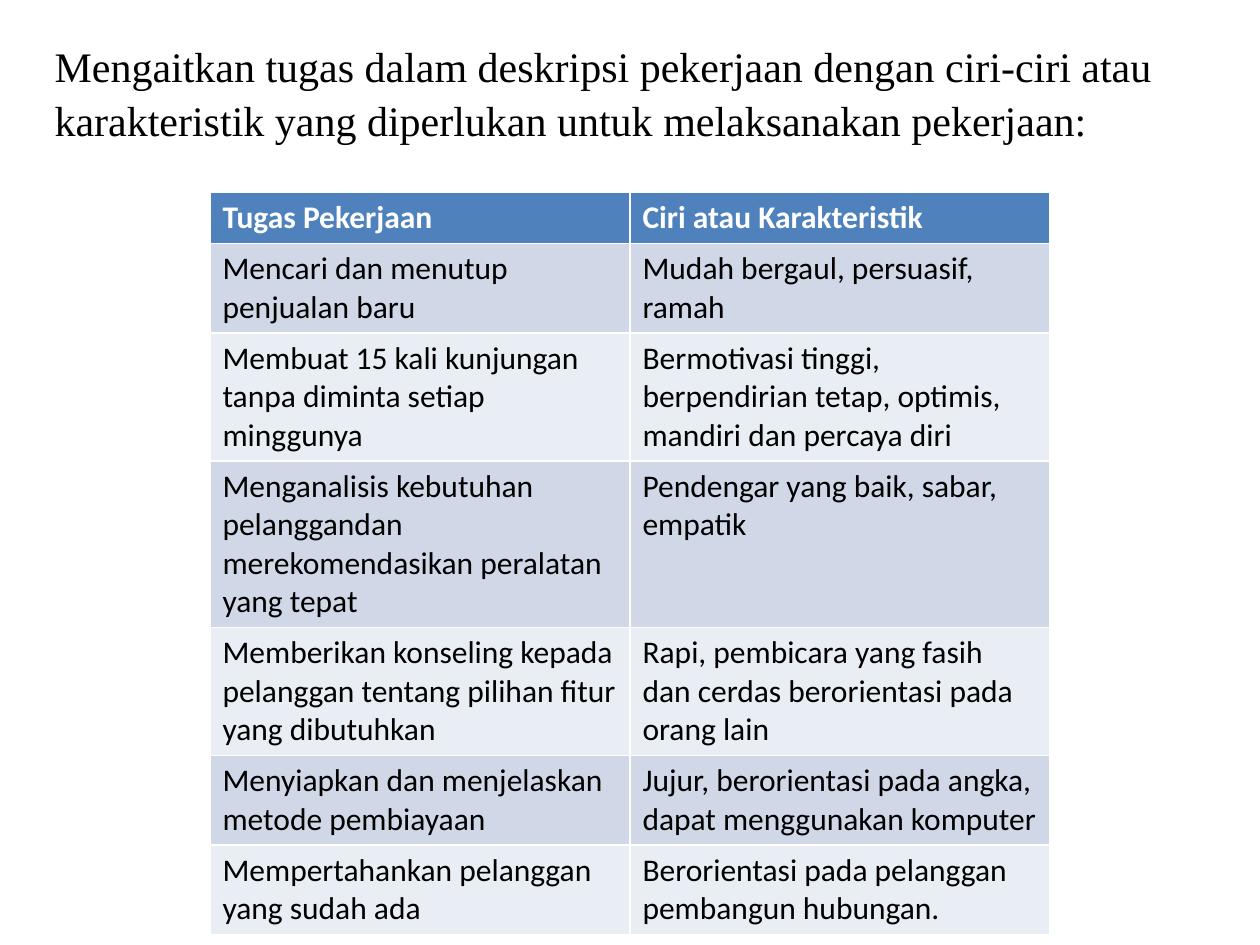
import pptx
import pptx.util
import pptx.dml.color
import pptx.enum.text

Pt = pptx.util.Pt
COLORS = {"head": "4F81BD", "odd": "D0D8E8", "even": "E9EDF4",
          "white": "FFFFFF", "black": "000000"}


def color(name):
    return pptx.dml.color.RGBColor.from_string(COLORS[name])


deck = pptx.Presentation()
deck.slide_width, deck.slide_height = Pt(720), Pt(540)
slide = deck.slides.add_slide(deck.slide_layouts[5])

title = slide.shapes.title
title.left, title.top, title.width, title.height = Pt(24), Pt(18), Pt(672), Pt(72)
frame = title.text_frame
frame.text = ("Mengaitkan tugas dalam deskripsi pekerjaan dengan ciri-ciri atau "
              "karakteristik yang diperlukan untuk melaksanakan pekerjaan:")
frame.word_wrap = True
frame.auto_size = pptx.enum.text.MSO_AUTO_SIZE.NONE
frame.vertical_anchor = pptx.enum.text.MSO_ANCHOR.TOP
para = frame.paragraphs[0]
para.alignment = pptx.enum.text.PP_ALIGN.LEFT
para.line_spacing = 1.06
para.font.name = "Times New Roman"
para.font.size = Pt(24)
para.font.color.rgb = color("black")

rows = [
    ("Tugas Pekerjaan", "Ciri atau Karakteristik"),
    ("Mencari dan menutup penjualan baru", "Mudah bergaul, persuasif, ramah"),
    ("Membuat 15 kali kunjungan tanpa diminta setiap minggunya",
     "Bermotivasi tinggi, berpendirian tetap, optimis, mandiri dan percaya diri"),
    ("Menganalisis kebutuhan pelanggandan merekomendasikan peralatan yang tepat",
     "Pendengar yang baik, sabar, empatik"),
    ("Memberikan konseling kepada pelanggan tentang pilihan fitur yang dibutuhkan",
     "Rapi, pembicara yang fasih dan cerdas berorientasi pada orang lain"),
    ("Menyiapkan dan menjelaskan metode pembiayaan",
     "Jujur, berorientasi pada angka, dapat menggunakan komputer"),
    ("Mempertahankan pelanggan yang sudah ada",
     "Berorientasi pada pelanggan pembangun hubungan."),
]
# Rows start at one line high and grow with their text.
high = 29.2
table = slide.shapes.add_table(len(rows), 2, Pt(120), Pt(110), Pt(480),
                               Pt(high * len(rows))).table
for r, row in enumerate(rows):
    fill = "head" if r == 0 else "odd" if r % 2 else "even"
    for c, text in enumerate(row):
        cell = table.cell(r, c)
        cell.text = text
        cell.fill.solid()
        cell.fill.fore_color.rgb = color(fill)
        font = cell.text_frame.paragraphs[0].font
        font.name = "Calibri"
        font.size = Pt(18)
        font.bold = r == 0
        font.color.rgb = color("black" if r else "white")

deck.save("out.pptx")
